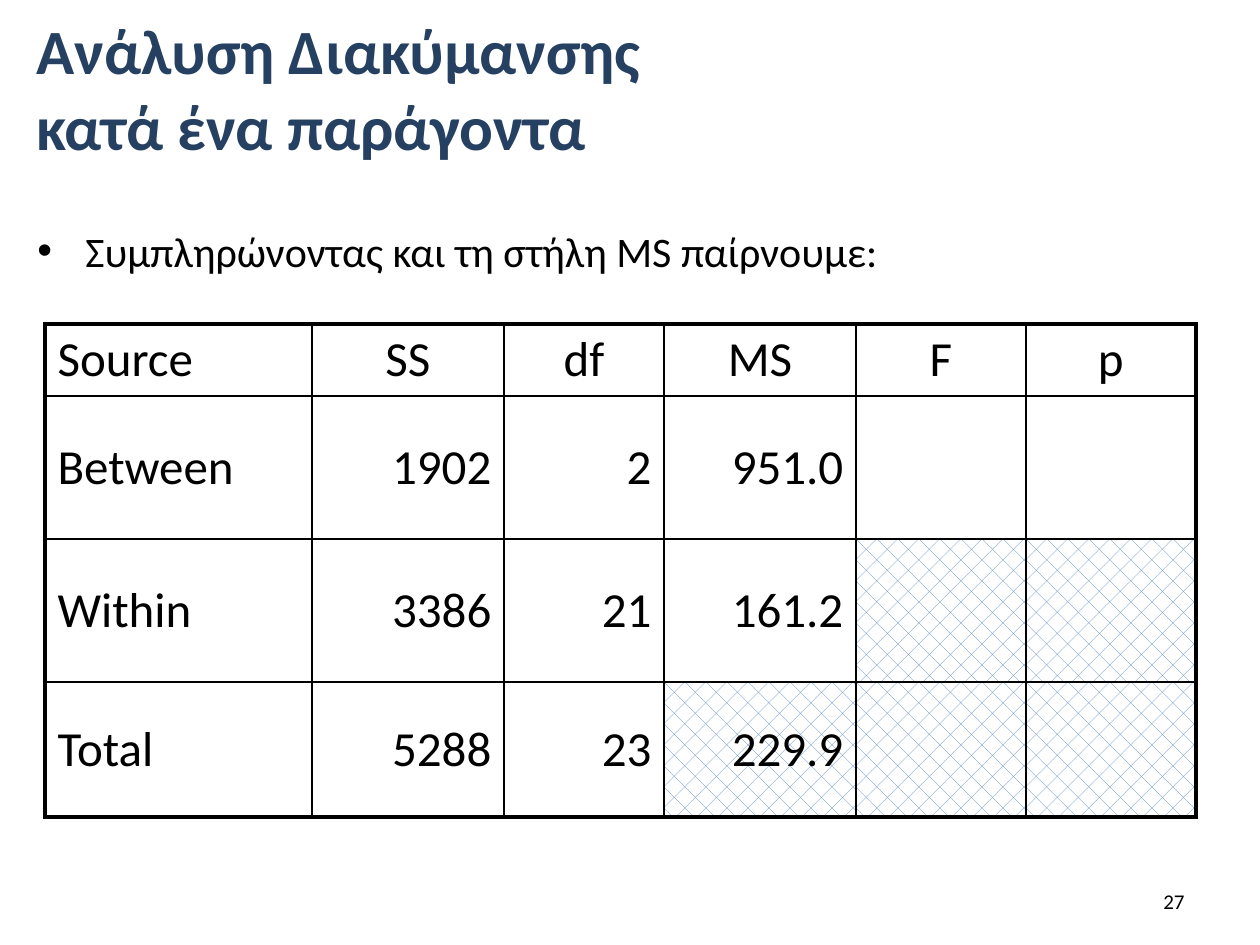
from lxml.etree import SubElement
from pptx import Presentation
from pptx.dml.color import RGBColor
from pptx.enum.dml import MSO_PATTERN
from pptx.enum.text import MSO_ANCHOR, PP_ALIGN
from pptx.oxml import parse_xml
from pptx.oxml.ns import nsdecls, qn
from pptx.util import Pt

PX = 914400 / 126
LEFT, MID, RIGHT = PP_ALIGN.LEFT, PP_ALIGN.CENTER, PP_ALIGN.RIGHT


def color(code):
    return RGBColor.from_string(code)


def write(frame, text, size=28, ink="000000", bold=False, align=LEFT):
    frame.word_wrap = True
    para = frame.paragraphs[0]
    para.text = text
    para.alignment = align
    for run in para.runs:
        font = run.font
        font.name, font.size, font.bold = "Calibri", Pt(size), bold
        font.color.rgb = color(ink)
    return para


deck = Presentation()
deck.slide_width, deck.slide_height = int(1260 * PX), int(945 * PX)
slide = deck.slides.add_slide(deck.slide_layouts[6])

frames = []
for box in [(0, 0, 1260, 175), (25, 214, 1134, 95), (903, 876, 294, 50)]:
    frame = slide.shapes.add_textbox(*[int(n * PX) for n in box]).text_frame
    frame.vertical_anchor = MSO_ANCHOR.MIDDLE
    frames.append(frame)
title, body, number = frames

para = write(title, "Ανάλυση Διακύμανσης\nκατά ένα παράγοντα", size=36, ink="254061", bold=True)
para._p.get_or_add_pPr().set("marL", str(int(24 * PX)))

body.vertical_anchor = MSO_ANCHOR.TOP
para = write(body, "Συμπληρώνοντας και τη στήλη MS παίρνουμε:", size=24)
para.line_spacing, para.space_before = 1.1, Pt(12)
props = para._p.get_or_add_pPr()
props.set("marL", str(int(48 * PX)))
props.set("indent", str(int(-48 * PX)))
SubElement(props, qn("a:buFont")).set("typeface", "Arial")
SubElement(props, qn("a:buChar")).set("char", "•")

write(number, "27", size=12, align=RIGHT)

rows = [
    ["Source", "SS", "df", "MS", "F", "p"],
    ["Between", "1902", "2", "951.0", "", ""],
    ["Within", "3386", "21", "161.2", "", ""],
    ["Total", "5288", "23", "229.9", "", ""],
]
widths = [267, 192, 160, 192, 170, 170]
heights = [72, 143, 143, 135]
hatched = {(2, 4), (2, 5), (3, 3), (3, 4), (3, 5)}

area = [int(n * PX) for n in (45, 324, sum(widths), sum(heights))]
table = slide.shapes.add_table(len(rows), len(widths), *area).table
table.first_row = table.horz_banding = False
for col, width in zip(table.columns, widths):
    col.width = int(width * PX)
for row, height in zip(table.rows, heights):
    row.height = int(height * PX)

for r, row in enumerate(rows):
    for c, text in enumerate(row):
        cell = table.cell(r, c)
        cell.vertical_anchor = MSO_ANCHOR.MIDDLE
        align = LEFT if c == 0 else MID if r == 0 else RIGHT
        write(cell.text_frame, text, align=align)
        outer = {"L": c == 0, "R": c == 5, "T": r == 0, "B": r == 3}
        for side, thick in outer.items():
            width = Pt(2.25 if thick else 1)
            cell._tc.get_or_add_tcPr().append(parse_xml(
                f'<a:ln{side} {nsdecls("a")} w="{width}"><a:solidFill>'
                f'<a:srgbClr val="000000"/></a:solidFill></a:ln{side}>'))
        if (r, c) in hatched:
            cell.fill.patterned()
            cell.fill.pattern = MSO_PATTERN.DIAGONAL_BRICK
            cell.fill.fore_color.rgb = color("4F81BD")
            cell.fill.back_color.rgb = color("FFFFFF")
        else:
            cell.fill.background()

deck.save("out.pptx")
